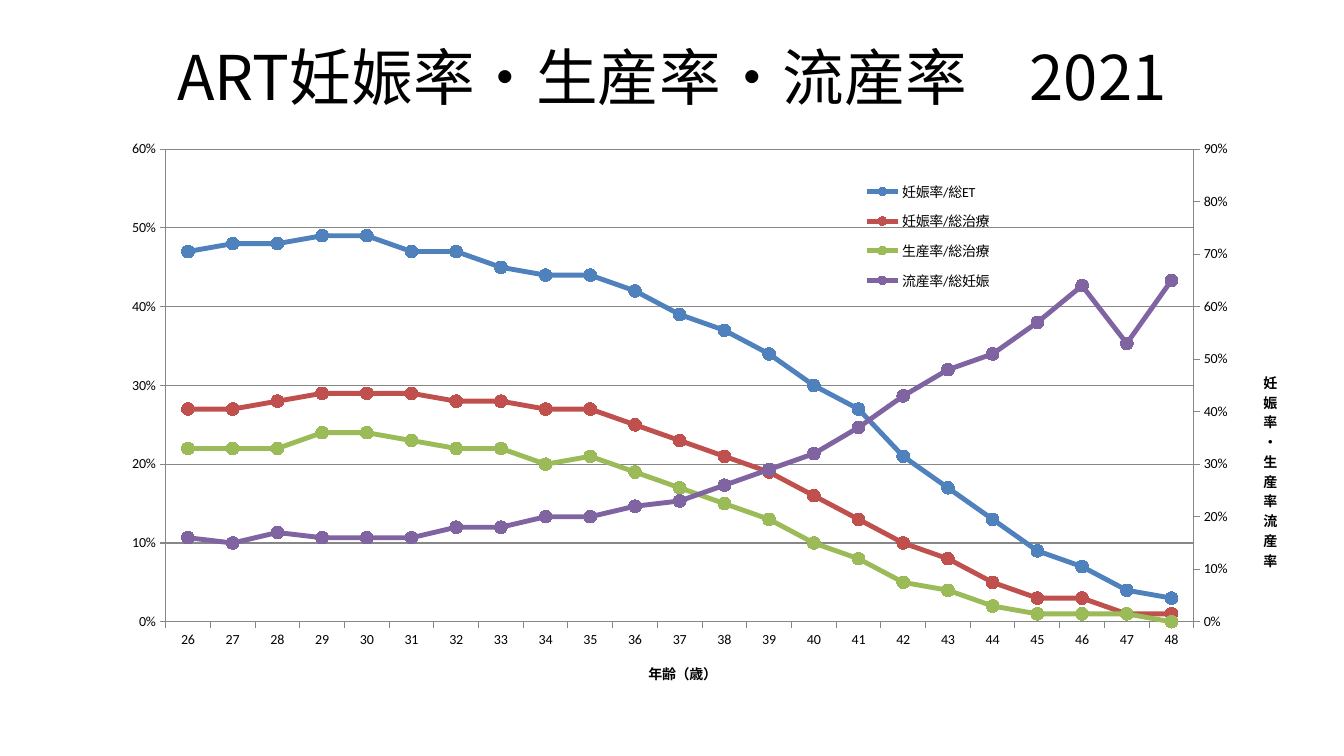
"""Build the slide of ART pregnancy, birth and miscarriage rates by age."""
from copy import deepcopy
from dataclasses import dataclass

from lxml.etree import SubElement
from pptx import Presentation
from pptx.chart.axis import CategoryAxis, ValueAxis
from pptx.chart.data import CategoryChartData
from pptx.dml.color import RGBColor
from pptx.enum.chart import XL_CHART_TYPE, XL_LEGEND_POSITION, XL_MARKER_STYLE, XL_TICK_MARK
from pptx.enum.text import MSO_ANCHOR, PP_ALIGN
from pptx.oxml import parse_xml
from pptx.oxml.ns import nsdecls, qn
from pptx.util import Pt

PX = 914400 / 100.8
AGES = [str(age) for age in range(26, 49)]
RATES = {
    "妊娠率/総ET": (0.47, 0.48, 0.48, 0.49, 0.49, 0.47, 0.47, 0.45, 0.44, 0.44, 0.42, 0.39,
                0.37, 0.34, 0.3, 0.27, 0.21, 0.17, 0.13, 0.09, 0.07, 0.04, 0.03),
    "妊娠率/総治療": (0.27, 0.27, 0.28, 0.29, 0.29, 0.29, 0.28, 0.28, 0.27, 0.27, 0.25, 0.23,
                0.21, 0.19, 0.16, 0.13, 0.1, 0.08, 0.05, 0.03, 0.03, 0.01, 0.01),
    "生産率/総治療": (0.22, 0.22, 0.22, 0.24, 0.24, 0.23, 0.22, 0.22, 0.2, 0.21, 0.19, 0.17,
                0.15, 0.13, 0.1, 0.08, 0.05, 0.04, 0.02, 0.01, 0.01, 0.01, 0),
    "流産率/総妊娠": (0.16, 0.15, 0.17, 0.16, 0.16, 0.16, 0.18, 0.18, 0.2, 0.2, 0.22, 0.23,
                0.26, 0.29, 0.32, 0.37, 0.43, 0.48, 0.51, 0.57, 0.64, 0.53, 0.65),
}


@dataclass(frozen=True)
class Theme:
    """Colours, fonts and sizes of the slide."""
    text: str = "000000"
    rule: str = "868686"
    series: tuple = ("4F81BD", "C0504D", "9BBB59", "8064A2")
    title_font: str = "Noto Sans CJK JP"
    chart_font: str = "Calibri"
    title_size: int = 44
    chart_size: int = 10
    line_width: float = 3.5
    marker_size: int = 9


def px(length):
    """Turn pixels into EMU."""
    return round(length * PX)


def write(frame, text, *, font, size, color, bold=False, align=PP_ALIGN.CENTER):
    """Write one formatted run into the first paragraph of a text frame."""
    paragraph = frame.paragraphs[0]
    paragraph.alignment = align
    run = paragraph.add_run()
    run.text = text
    run.font.name, run.font.size, run.font.bold = font, Pt(size), bold
    run.font.color.rgb = RGBColor.from_string(color)
    east_asian = SubElement(run.font._element, qn("a:ea"))
    east_asian.set("typeface", "Noto Sans CJK JP")


def place(element, index, **layout):
    """Give a chart part a manual layout in fractions of the chart."""
    for old in element.xpath("c:layout"):
        element.remove(old)
    modes = {"layoutTarget": "inner"} if index == 0 else {}
    modes.update(xMode="edge", yMode="edge")
    items = "".join(f'<c:{key} val="{value}"/>' for key, value in {**modes, **layout}.items())
    element.insert(index, parse_xml(
        f'<c:layout {nsdecls("c")}><c:manualLayout>{items}</c:manualLayout></c:layout>'))


def add_right_axis(chart):
    """Move the last series to a second value axis and return that axis."""
    plot_area = chart.element.xpath("c:chart/c:plotArea")[0]
    left_lines = plot_area.xpath("c:lineChart")[0]
    right_lines = deepcopy(left_lines)
    left_lines.remove(left_lines.xpath("c:ser")[-1])
    for series in right_lines.xpath("c:ser")[:-1]:
        right_lines.remove(series)
    left_lines.addnext(right_lines)
    left_category, left_value = plot_area.xpath("c:catAx")[0], plot_area.xpath("c:valAx")[0]
    right_category, right_value = deepcopy(left_category), deepcopy(left_value)
    left_value.addnext(right_value)
    right_value.addnext(right_category)
    identifiers = {left_category.xpath("c:axId")[0].get("val"): "50010",
                   left_value.xpath("c:axId")[0].get("val"): "50020"}
    for part in (right_lines, right_category, right_value):
        for reference in part.xpath("c:axId | c:crossAx"):
            reference.set("val", identifiers[reference.get("val")])
    CategoryAxis(right_category).visible = False
    right_value.xpath("c:axPos")[0].set("val", "r")
    right_value.xpath("c:crosses")[0].set("val", "max")
    return ValueAxis(right_value)


class RateSlide:
    """Holds the theme and the current slide and adds elements to it."""

    def __init__(self, presentation, theme):
        """Start a blank slide."""
        self.theme = theme
        self.slide = presentation.slides.add_slide(presentation.slide_layouts[6])

    def title(self, text, left, top, width, height):
        """Add the centred slide title."""
        frame = self.slide.shapes.add_textbox(px(left), px(top), px(width), px(height)).text_frame
        frame.word_wrap = True
        frame.vertical_anchor = MSO_ANCHOR.MIDDLE
        write(frame, text, font=self.theme.title_font, size=self.theme.title_size,
              color=self.theme.text)

    def axis(self, axis, title, x, y, *, maximum=None, unit=None, grid=False):
        """Format one chart axis and its title."""
        theme = self.theme
        rule = RGBColor.from_string(theme.rule)
        axis.major_tick_mark, axis.minor_tick_mark = XL_TICK_MARK.OUTSIDE, XL_TICK_MARK.NONE
        axis.format.line.color.rgb = rule
        axis.has_major_gridlines = grid
        if grid:
            axis.major_gridlines.format.line.color.rgb = rule
        write(axis.axis_title.text_frame, title, font=theme.chart_font, size=theme.chart_size,
              color=theme.text, bold=True)
        place(axis.axis_title.element, 1, x=x, y=y)
        if maximum:
            axis.minimum_scale, axis.maximum_scale, axis.major_unit = 0, maximum, unit
            axis.tick_labels.number_format = "0%"
            axis.tick_labels.number_format_is_linked = False
            body = axis.axis_title.element.xpath(".//a:bodyPr")[0]
            body.set("rot", "0")
            body.set("vert", "wordArtVertRtl")

    def rate_chart(self, left, top, width, height):
        """Add the line chart with its two value axes."""
        theme = self.theme
        data = CategoryChartData(number_format="0%")
        data.categories = AGES
        for name, values in RATES.items():
            data.add_series(name, values)
        chart = self.slide.shapes.add_chart(XL_CHART_TYPE.LINE_MARKERS, px(left), px(top),
                                            px(width), px(height), data).chart
        chart.has_title = False
        chart.font.name, chart.font.size = theme.chart_font, Pt(theme.chart_size)
        chart.font.color.rgb = RGBColor.from_string(theme.text)
        chart.plots[0].vary_by_categories = False
        for series, name in zip(chart.plots[0].series, theme.series):
            color = RGBColor.from_string(name)
            series.smooth = False
            series.format.line.width = Pt(theme.line_width)
            series.format.line.color.rgb = color
            series.marker.style, series.marker.size = XL_MARKER_STYLE.CIRCLE, theme.marker_size
            series.marker.format.fill.solid()
            series.marker.format.fill.fore_color.rgb = color
            series.marker.format.line.color.rgb = color
        right_axis = add_right_axis(chart)
        self.axis(chart.category_axis, "年齢（歳）", 0.48, 0.96)
        self.axis(chart.value_axis, "妊娠率・生産率", 0.04, 0.36, maximum=0.5, unit=0.05, grid=True)
        self.axis(right_axis, "流産率", 0.97, 0.43, maximum=0.9, unit=0.1)
        chart.has_legend = True
        chart.legend.position = XL_LEGEND_POSITION.RIGHT
        chart.legend.include_in_layout = False
        place(chart.element.xpath("c:chart/c:legend")[0], 1, x=0.645, y=0.074, w=0.12, h=0.233)
        place(chart.element.xpath("c:chart/c:plotArea")[0], 0, x=0.097, y=0.033, w=0.82, h=0.858)


def main():
    """Build and save the presentation."""
    presentation = Presentation()
    presentation.slide_width, presentation.slide_height = px(1344), px(756)
    slide = RateSlide(presentation, Theme())
    slide.title("ART妊娠率・生産率・流産率　2021", 67, 30, 1210, 92)
    slide.rate_chart(44, 131, 1254, 557)
    presentation.save("out.pptx")


if __name__ == "__main__":
    main()
